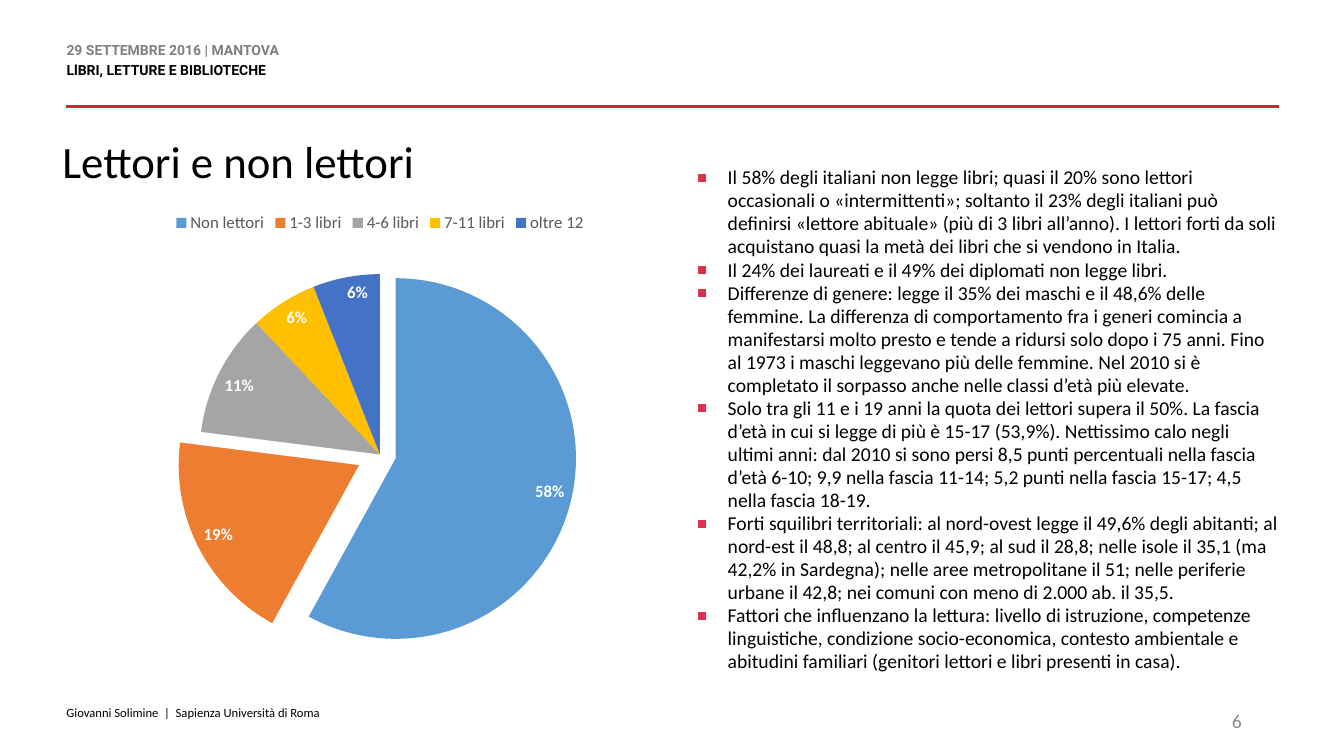
from lxml import etree
from pptx import Presentation
from pptx.chart.data import CategoryChartData
from pptx.dml.color import RGBColor
from pptx.enum.chart import XL_CHART_TYPE as ChartType
from pptx.enum.chart import XL_LABEL_POSITION as LabelPosition
from pptx.enum.chart import XL_LEGEND_POSITION as LegendPosition
from pptx.enum.shapes import MSO_CONNECTOR as Connector
from pptx.enum.text import MSO_ANCHOR as Anchor
from pptx.enum.text import PP_ALIGN as Align
from pptx.oxml.ns import qn
from pptx.util import Pt

BLACK = RGBColor(0x00, 0x00, 0x00)
WHITE = RGBColor(0xFF, 0xFF, 0xFF)
GRAY = RGBColor(0x80, 0x80, 0x80)
NUMBER_GRAY = RGBColor(0x8C, 0x8C, 0x8C)
LEGEND_GRAY = RGBColor(0x59, 0x59, 0x59)
RULE_RED = RGBColor(0xC7, 0x2A, 0x31)
BULLET_RED = "DA304A"

EVENT = ["29 SETTEMBRE 2016 | MANTOVA", "LlBRI, LETTURE E BIBLIOTECHE"]
TITLE = "Lettori e non lettori"
FINDINGS = [
    "Il 58% degli italiani non legge libri; quasi il 20% sono lettori occasionali o «intermittenti»; "
    "soltanto il 23% degli italiani può definirsi «lettore abituale» (più di 3 libri all’anno). "
    "I lettori forti da soli acquistano quasi la metà dei libri che si vendono in Italia.",
    "Il 24% dei laureati e il 49% dei diplomati non legge libri.",
    "Differenze di genere: legge il 35% dei maschi e il 48,6% delle femmine. La differenza di "
    "comportamento fra i generi comincia a manifestarsi molto presto e tende a ridursi solo dopo "
    "i 75 anni. Fino al 1973 i maschi leggevano più delle femmine. Nel 2010 si è completato il "
    "sorpasso anche nelle classi d’età più elevate.",
    "Solo tra gli 11 e i 19 anni la quota dei lettori supera il 50%. La fascia d’età in cui si legge "
    "di più è 15-17 (53,9%). Nettissimo calo negli ultimi anni: dal 2010 si sono persi 8,5 punti "
    "percentuali nella fascia d’età 6-10; 9,9 nella fascia 11-14; 5,2 punti nella fascia 15-17; "
    "4,5 nella fascia 18-19.",
    "Forti squilibri territoriali: al nord-ovest legge il 49,6% degli abitanti; al nord-est il 48,8; "
    "al centro il 45,9; al sud il 28,8; nelle isole il 35,1 (ma 42,2% in Sardegna); nelle aree "
    "metropolitane il 51; nelle periferie urbane il 42,8; nei comuni con meno di 2.000 ab. il 35,5.",
    "Fattori che influenzano la lettura: livello di istruzione, competenze linguistiche, condizione "
    "socio-economica, contesto ambientale e abitudini familiari (genitori lettori e libri presenti "
    "in casa).",
]
AUTHOR = "Giovanni Solimine  |  Sapienza Università di Roma"
PAGE = "6"
READERS = [
    ("Non lettori", 58, RGBColor(0x5B, 0x9B, 0xD5), 9),
    ("1-3 libri", 19, RGBColor(0xED, 0x7D, 0x31), 13),
    ("4-6 libri", 11, RGBColor(0xA5, 0xA5, 0xA5), 0),
    ("7-11 libri", 6, RGBColor(0xFF, 0xC0, 0x00), 0),
    ("oltre 12", 6, RGBColor(0x44, 0x72, 0xC4), 0),
]
LEFT, RIGHT = 47.5, 913.7
INDENT = 22.3


def style(font, size, color, name="Calibri", bold=False):
    font.size, font.name, font.bold = Pt(size), name, bold
    font.color.rgb = color


def add_text(slide, box, lines, size, color, name="Calibri", bold=False, spacing=None, bulleted=False):
    frame = slide.shapes.add_textbox(*map(Pt, box)).text_frame
    frame.word_wrap = True
    frame.margin_left = frame.margin_top = frame.margin_right = frame.margin_bottom = 0
    for i, line in enumerate(lines):
        paragraph = frame.paragraphs[0] if i == 0 else frame.add_paragraph()
        paragraph.text = line
        if spacing:
            paragraph.line_spacing = spacing
        if bulleted:
            add_bullet(paragraph)
        style(paragraph.font, size, color, name, bold)
    return frame


def add_bullet(paragraph):
    props = paragraph._p.get_or_add_pPr()
    props.set("marL", str(Pt(INDENT)))
    props.set("indent", str(-Pt(INDENT)))
    tint = etree.SubElement(props, qn("a:buClr"))
    etree.SubElement(tint, qn("a:srgbClr"), val=BULLET_RED)
    etree.SubElement(props, qn("a:buSzPct"), val="160000")
    etree.SubElement(props, qn("a:buFont"), typeface="Calibri")
    etree.SubElement(props, qn("a:buChar"), char="▪")


def add_readers_pie(slide):
    data = CategoryChartData()
    data.categories = [label for label, *_ in READERS]
    data.add_series("Lettori", [share for _, share, *_ in READERS])
    box = map(Pt, (LEFT, 144, 447.8, 336.2))
    chart = slide.shapes.add_chart(ChartType.PIE, *box, data).chart
    style(chart.font, 10, BLACK)
    chart.has_title = False
    chart.has_legend = True
    chart.legend.position = LegendPosition.TOP
    chart.legend.include_in_layout = False
    style(chart.legend.font, 12, LEGEND_GRAY)

    plot = chart.plots[0]
    plot.vary_by_categories = True
    plot.has_data_labels = True
    labels = plot.data_labels
    labels.show_percentage, labels.show_value = True, False
    labels.number_format, labels.number_format_is_linked = "0%", False
    labels.position = LabelPosition.INSIDE_END
    style(labels.font, 12, WHITE, bold=True)

    for i, (_, _, color, offset) in enumerate(READERS):
        point = plot.series[0].points[i]
        point.format.fill.solid()
        point.format.fill.fore_color.rgb = color
        if offset:
            slice_xml = point.format.fill._xPr.getparent().getparent()
            dpt = next(d for d in slice_xml.iter(qn("c:dPt")) if d.find(qn("c:idx")).get("val") == str(i))
            explosion = etree.Element(qn("c:explosion"), val=str(offset))
            dpt.find(qn("c:spPr")).addprevious(explosion)


def main():
    deck = Presentation()
    deck.slide_width, deck.slide_height = Pt(960), Pt(540)
    slide = deck.slides.add_slide(deck.slide_layouts[6])

    rule = slide.shapes.add_connector(Connector.STRAIGHT, Pt(LEFT), Pt(76.3), Pt(RIGHT), Pt(76.3))
    rule.line.color.rgb = RULE_RED
    rule.line.width = Pt(2)
    etree.SubElement(rule._element.spPr, qn("a:effectLst"))

    event = add_text(slide, (LEFT, 31, 397.4, 36.7), EVENT, 10, BLACK, "Roboto", True, Pt(11))
    event.paragraphs[0].space_after = Pt(3)
    event.paragraphs[0].font.color.rgb = GRAY

    add_text(slide, (44.6, 100.1, 399.6, 81.4), [TITLE], 32, BLACK, spacing=0.9)
    add_text(slide, (497.5, 118.8, 416.9, 352.1), FINDINGS, 14, BLACK, spacing=0.98, bulleted=True)
    add_text(slide, (LEFT, 503.8, 594.7, 25), [AUTHOR], 9, BLACK)

    number = add_text(slide, (678.2, 500.4, 208.8, 28.8), [PAGE], 14, NUMBER_GRAY)
    number.vertical_anchor = Anchor.MIDDLE
    number.paragraphs[0].alignment = Align.RIGHT

    add_readers_pie(slide)
    deck.save("out.pptx")


if __name__ == "__main__":
    main()
